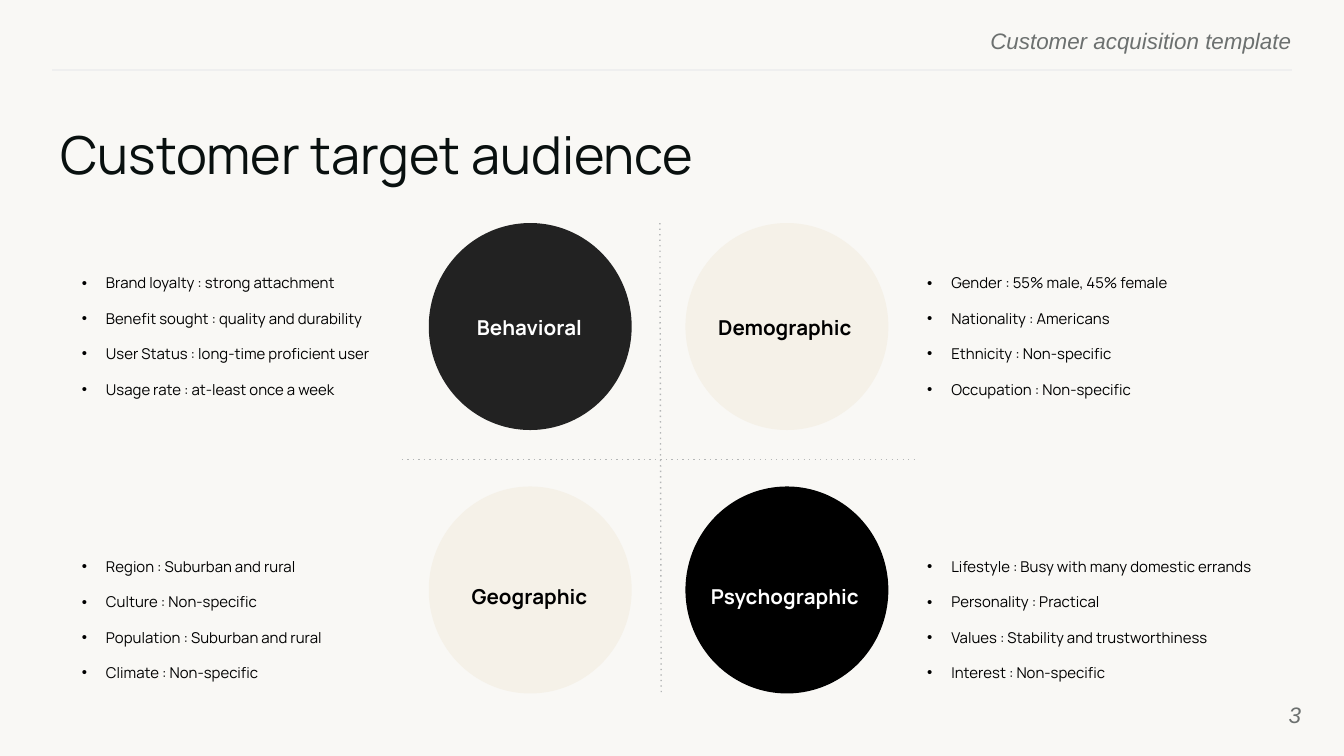
from lxml import etree
from pptx import Presentation
from pptx.dml.color import RGBColor
from pptx.enum.shapes import MSO_CONNECTOR, MSO_SHAPE
from pptx.enum.text import MSO_ANCHOR, MSO_AUTO_SIZE, PP_ALIGN
from pptx.oxml.ns import qn
from pptx.util import Pt

PX = 4572
LEFT, CENTER, RIGHT = PP_ALIGN.LEFT, PP_ALIGN.CENTER, PP_ALIGN.RIGHT
TOP, MIDDLE = MSO_ANCHOR.TOP, MSO_ANCHOR.MIDDLE
FIT_SHAPE = MSO_AUTO_SIZE.SHAPE_TO_FIT_TEXT
OVAL, STRAIGHT = MSO_SHAPE.OVAL, MSO_CONNECTOR.STRAIGHT

PAPER = RGBColor(0xF9, 0xF8, 0xF5)
INK = RGBColor(0x09, 0x10, 0x0F)
GRAY = RGBColor(0x6C, 0x70, 0x6F)
RULE = RGBColor(0xEF, 0xEF, 0xEF)
DOTS = RGBColor(0xB5, 0xB7, 0xB7)
CHARCOAL = RGBColor(0x22, 0x22, 0x22)
CREAM = RGBColor(0xF5, 0xF1, 0xE8)
BLACK = RGBColor(0x00, 0x00, 0x00)
WHITE = RGBColor(0xFF, 0xFF, 0xFF)

deck = Presentation()
deck.slide_width, deck.slide_height = 2000 * PX, 1125 * PX
page = deck.slides.add_slide(deck.slide_layouts[6])
page.background.fill.solid()
page.background.fill.fore_color.rgb = PAPER


def add_text(place, lines, size, color, font="Manrope", align=LEFT, anchor=TOP,
             inset=(0, 0), bold=False, italic=False):
    box = page.shapes.add_textbox(*[n * PX for n in place])
    frame = box.text_frame
    frame.word_wrap = True
    frame.vertical_anchor = anchor
    frame.margin_left = frame.margin_right = inset[0] * PX
    frame.margin_top = frame.margin_bottom = inset[1] * PX
    for index, line in enumerate(lines):
        para = frame.add_paragraph() if index else frame.paragraphs[0]
        para.alignment = align
        span = para.add_run()
        span.text = line
        span.font.name = font
        span.font.size = Pt(size)
        span.font.bold = bold
        span.font.italic = italic
        span.font.color.rgb = color
    return frame


def add_line(ends, color, dotted):
    line = page.shapes.add_connector(STRAIGHT, *[n * PX for n in ends])
    line.line.color.rgb = color
    line.line.width = Pt(0.75)
    properties = line._element.spPr
    if dotted:
        etree.SubElement(properties.find(qn("a:ln")), qn("a:prstDash"), val="dot")
    etree.SubElement(properties, qn("a:effectLst"))


add_text((1152, 40, 770, 36), ["Customer acquisition template"], 12, GRAY,
         font="Arial", align=RIGHT, italic=True)
add_line((1922, 104, 78, 104), RULE, False)
add_text((90, 182, 1846, 102), ["Customer target audience"], 28, INK)
add_text((1816, 1020, 120, 86), ["3"], 12, GRAY,
         font="Arial", align=RIGHT, anchor=MIDDLE, italic=True)

segments = [
    ("Behavioral", 0, 0, CHARCOAL, WHITE, 602, [
        "Brand loyalty : strong attachment",
        "Benefit sought : quality and durability",
        "User Status : long-time proficient user",
        "Usage rate : at-least once a week"]),
    ("Demographic", 1, 0, CREAM, BLACK, 730, [
        "Gender : 55% male, 45% female",
        "Nationality : Americans",
        "Ethnicity : Non-specific",
        "Occupation : Non-specific"]),
    ("Geographic", 0, 1, CREAM, BLACK, 602, [
        "Region : Suburban and rural",
        "Culture : Non-specific",
        "Population : Suburban and rural",
        "Climate : Non-specific"]),
    ("Psychographic", 1, 1, BLACK, WHITE, 698, [
        "Lifestyle : Busy with many domestic errands",
        "Personality : Practical",
        "Values : Stability and trustworthiness",
        "Interest : Non-specific"]),
]

for name, column, row, fill, label_color, list_width, facts in segments:
    circle = page.shapes.add_shape(
        OVAL, (638 + 382 * column) * PX, (332 + 392 * row) * PX, 302 * PX, 308 * PX)
    circle.shadow.inherit = False
    circle.fill.solid()
    circle.fill.fore_color.rgb = fill
    circle.line.fill.background()

add_line((598, 684, 1362, 684), DOTS, True)
add_line((982, 332, 984, 1036), DOTS, True)

for name, column, row, fill, label_color, list_width, facts in segments:
    add_text((630 + 380 * column, 460 + 400 * row, 316, 54), [name], 11, label_color,
             align=CENTER, anchor=MIDDLE, inset=(20, 20), bold=True)
    frame = add_text((100 + 1258 * column, 372 + 422 * row, list_width, 208),
                     facts, 8, BLACK, inset=(20, 10))
    frame.auto_size = FIT_SHAPE
    for para in frame.paragraphs:
        para.line_spacing = 1.98
        properties = para._p.get_or_add_pPr()
        properties.set("marL", str(38 * PX))
        properties.set("indent", str(-36 * PX))
        bullet_color = etree.SubElement(properties, qn("a:buClr"))
        etree.SubElement(bullet_color, qn("a:srgbClr"), val=str(BLACK))
        etree.SubElement(properties, qn("a:buFont"), typeface="Arial")
        etree.SubElement(properties, qn("a:buChar"), char="•")

deck.save("out.pptx")
